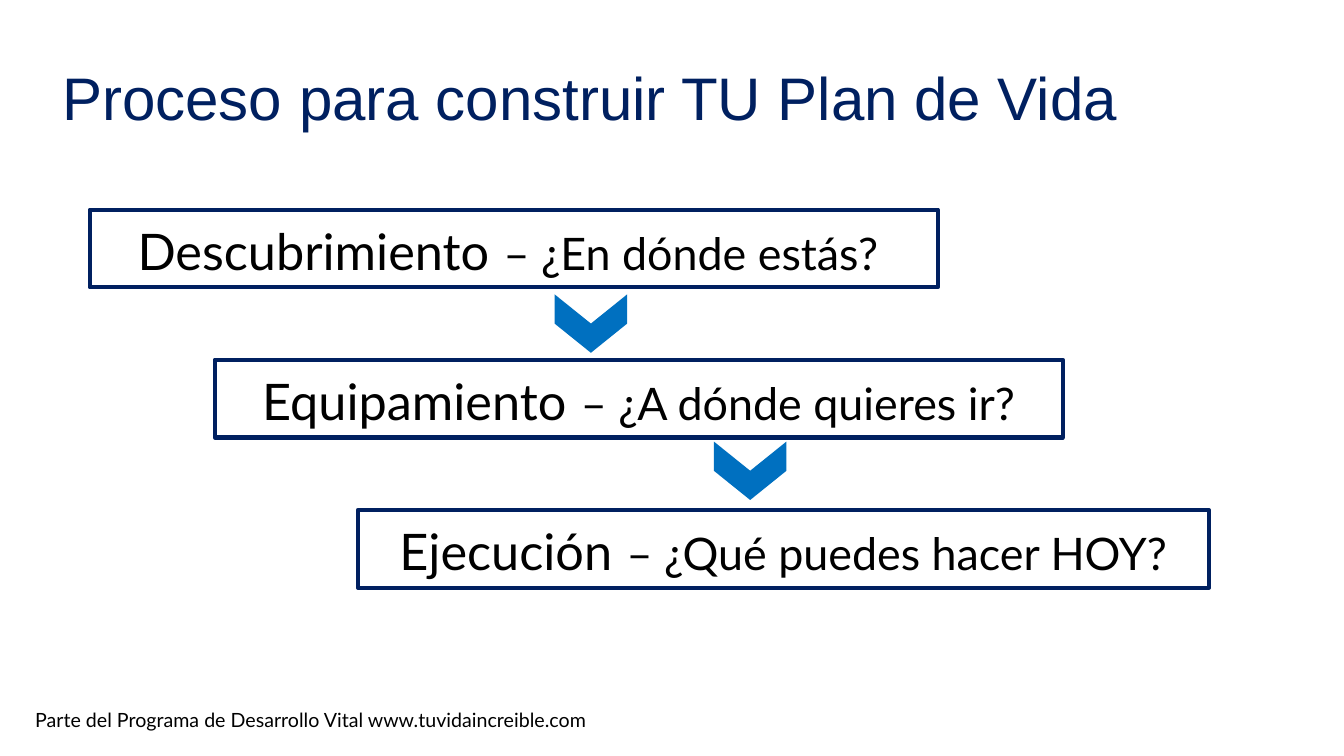
from dataclasses import dataclass

from pptx import Presentation
from pptx import util as u
from pptx.dml.color import RGBColor
from pptx.enum import shapes, text

NAVY = RGBColor(0x00, 0x20, 0x60)
BLUE = RGBColor(0x00, 0x70, 0xC0)
BLACK = RGBColor(0x00, 0x00, 0x00)

SLIDE_WIDTH = u.Inches(13.33)
SLIDE_HEIGHT = u.Inches(7.5)

# All lengths below are percentages of the slide's width or height.
FIRST_STEP_TOP = 27.73
STEP_PITCH = 19.87
STEP_HEIGHT = 10.27
CHEVRON_WIDTH = 4.35
CHEVRON_HEIGHT = 9.6


@dataclass(frozen=True)
class Area:
    left: float
    top: float
    width: float
    height: float

    def lengths(self) -> tuple[int, int, int, int]:
        """Left, top, width and height in EMU."""
        return (
            int(SLIDE_WIDTH * self.left / 100),
            int(SLIDE_HEIGHT * self.top / 100),
            int(SLIDE_WIDTH * self.width / 100),
            int(SLIDE_HEIGHT * self.height / 100),
        )


@dataclass(frozen=True)
class Run:
    text: str
    size: float
    font: str = "Lato"
    color: RGBColor = BLACK


@dataclass(frozen=True)
class Label:
    area: Area
    run: Run
    line_spacing: float = 1.0


@dataclass(frozen=True)
class Step:
    name: str
    question: str
    left: float
    width: float


@dataclass(frozen=True)
class Chevron:
    left: float
    top: float


LABELS = [
    Label(
        Area(1.88, 92.93, 60.17, 5.6),
        Run("Parte del Programa de Desarrollo Vital www.tuvidaincreible.com", 14),
    ),
    Label(
        Area(3.9, 8.4, 87.32, 13.07),
        Run("Proceso para construir TU Plan de Vida", 42.9, "Arial", NAVY),
        0.9,
    ),
]
STEPS = [
    Step("Descubrimiento", "– ¿En dónde estás? ", 6.68, 63.09),
    Step("Equipamiento", "– ¿A dónde quieres ir?", 15.98, 63.09),
    Step("Ejecución", "– ¿Qué puedes hacer HOY?", 26.63, 63.32),
]
CHEVRONS = [Chevron(41.79, 38), Chevron(53.64, 57.47)]


def add_runs(paragraph, runs: list[Run]) -> None:
    for item in runs:
        run = paragraph.add_run()
        run.text = item.text
        font_format = {"name": item.font, "size": u.Pt(item.size)}
        for attribute, value in font_format.items():
            setattr(run.font, attribute, value)
        run.font.color.rgb = item.color


def add_label(slide, label: Label) -> None:
    frame = slide.shapes.add_textbox(*label.area.lengths()).text_frame
    frame.word_wrap = True
    paragraph = frame.paragraphs[0]
    paragraph.line_spacing = label.line_spacing
    add_runs(paragraph, [label.run])


def add_step(slide, step: Step, index: int) -> None:
    top = FIRST_STEP_TOP + index * STEP_PITCH
    area = Area(step.left, top, step.width, STEP_HEIGHT)
    shape = slide.shapes.add_shape(shapes.MSO_SHAPE.RECTANGLE, *area.lengths())
    shape.shadow.inherit = False
    shape.fill.background()
    shape.line.color.rgb = NAVY
    shape.line.width = u.Pt(3)
    frame_format = {
        "word_wrap": True,
        "auto_size": text.MSO_AUTO_SIZE.SHAPE_TO_FIT_TEXT,
        "vertical_anchor": text.MSO_ANCHOR.TOP,
    }
    for attribute, value in frame_format.items():
        setattr(shape.text_frame, attribute, value)
    paragraph = shape.text_frame.paragraphs[0]
    paragraph.alignment = text.PP_ALIGN.CENTER
    add_runs(paragraph, [Run(step.name, 36), Run(" ", 40), Run(step.question, 32)])


def add_chevron(slide, chevron: Chevron) -> None:
    """Draw a chevron turned to point down."""
    area = Area(chevron.left, chevron.top, CHEVRON_WIDTH, CHEVRON_HEIGHT)
    shape = slide.shapes.add_shape(shapes.MSO_SHAPE.CHEVRON, *area.lengths())
    shape.rotation = 90
    shape.shadow.inherit = False
    shape.fill.solid()
    shape.fill.fore_color.rgb = BLUE
    shape.line.fill.background()


def main() -> None:
    presentation = Presentation()
    presentation.slide_width = SLIDE_WIDTH
    presentation.slide_height = SLIDE_HEIGHT
    slide = presentation.slides.add_slide(presentation.slide_layouts[6])
    for label in LABELS:
        add_label(slide, label)
    for chevron in CHEVRONS:
        add_chevron(slide, chevron)
    for index, step in enumerate(STEPS):
        add_step(slide, step, index)
    presentation.save("out.pptx")


if __name__ == "__main__":
    main()
